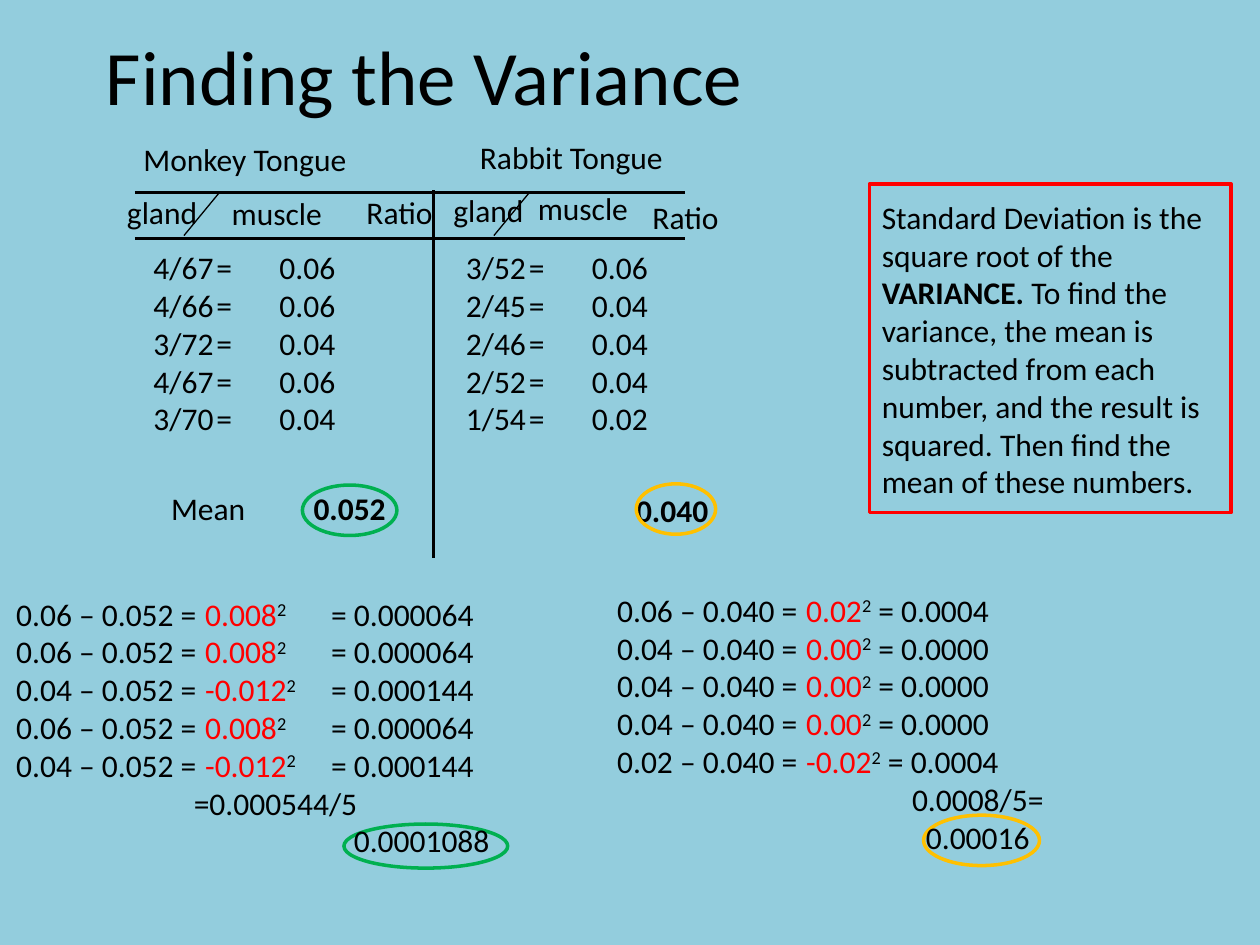
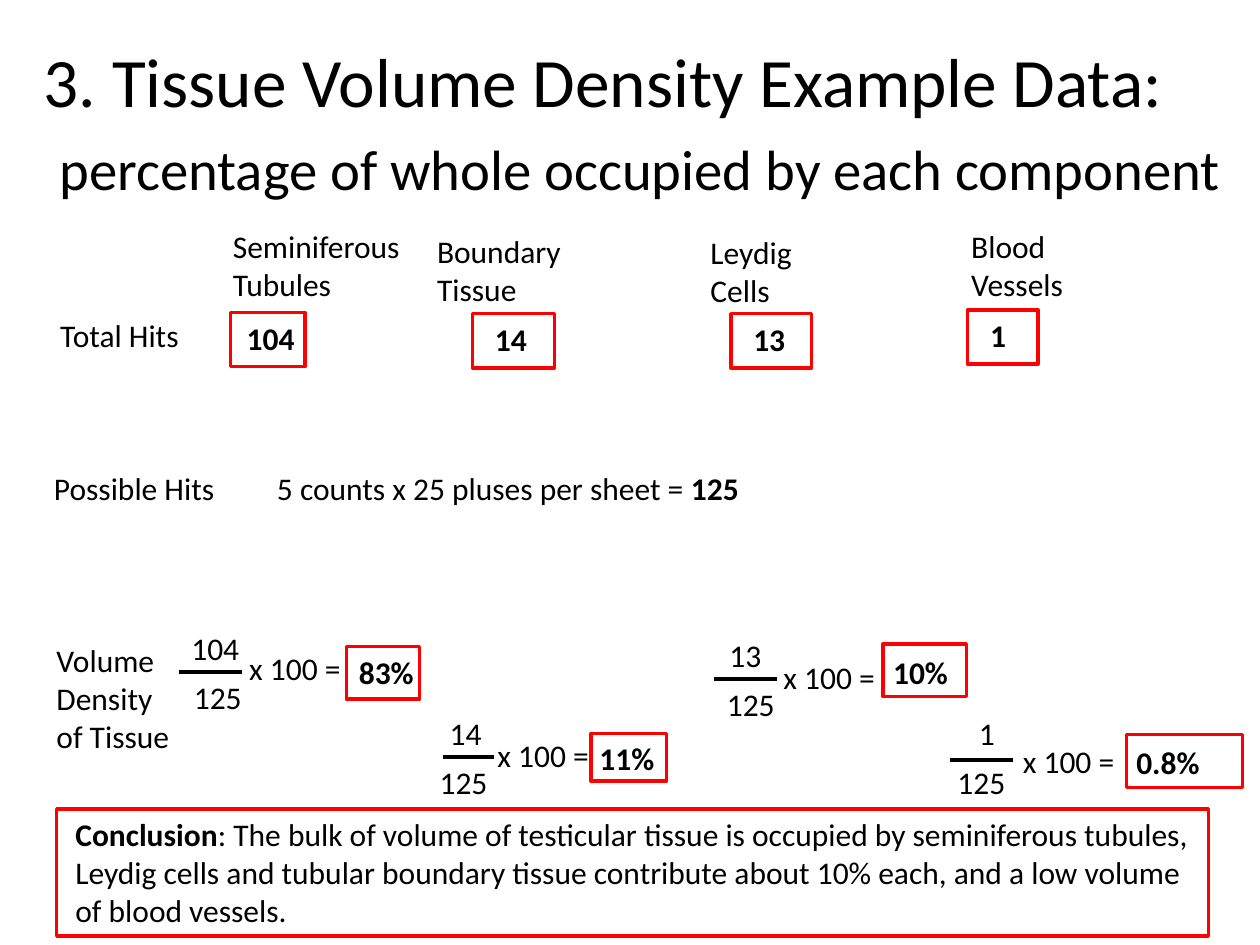
"""Build two slides on variance and tissue volume density."""
from lxml import etree
from pptx import Presentation
from pptx.dml.color import RGBColor
from pptx.enum import shapes, text
from pptx.oxml import ns
from pptx.util import Inches, Pt

COLORS = {"ink": "000000", "red": "FF0000", "green": "00B050",
          "amber": "FFC000", "sky": "93CDDD", "white": "FFFFFF"}
LINE_HEIGHT = 0.4


def add_run(paragraph, content, size=18, bold=False, color="ink", raised=False):
    """Append formatted text, turning newlines into line breaks."""
    for number, line in enumerate(content.split("\n")):
        if number:
            paragraph.add_line_break()
        run = paragraph.add_run()
        run.text = line
        run.font.name = "Calibri"
        run.font.size = Pt(size)
        run.font.bold = bold
        run.font.color.rgb = RGBColor.from_string(COLORS[color])
        if raised:
            run.font._element.set("baseline", "30000")


class Deck:
    """Hold the shared style and the current slide."""

    def __init__(self):
        """Start an empty 10 by 7.5 inch presentation."""
        self.presentation = Presentation()
        self.presentation.slide_width = Inches(10)
        self.presentation.slide_height = Inches(7.5)
        self.slide = None

    def add_slide(self, background):
        """Add a blank slide with a plain background."""
        self.slide = self.presentation.slides.add_slide(self.presentation.slide_layouts[6])
        fill = self.slide.background.fill
        fill.solid()
        fill.fore_color.rgb = RGBColor.from_string(COLORS[background])

    def text_box(self, left, top, width, height=LINE_HEIGHT, middle=False):
        """Add an empty wrapping text box and return its frame."""
        frame = self.slide.shapes.add_textbox(
            Inches(left), Inches(top), Inches(width), Inches(height)).text_frame
        frame.word_wrap = True
        if middle:
            frame.vertical_anchor = text.MSO_ANCHOR.MIDDLE
        return frame

    def label(self, content, left, top, width, height=LINE_HEIGHT, **style):
        """Add a text box with a single run."""
        frame = self.text_box(left, top, width, height)
        add_run(frame.paragraphs[0], content, **style)

    def title(self, runs, left, top, width, height, centered=False):
        """Add a vertically centred title made of (text, size) runs."""
        paragraph = self.text_box(left, top, width, height, middle=True).paragraphs[0]
        if centered:
            paragraph.alignment = text.PP_ALIGN.CENTER
        for content, size in runs:
            add_run(paragraph, content, size=size)

    def rich(self, paragraphs, left, top, width, height=LINE_HEIGHT, tabs=()):
        """Add paragraphs given as (indent, runs), with shared tab stops."""
        frame = self.text_box(left, top, width, height)
        for number, (indent, runs) in enumerate(paragraphs):
            paragraph = frame.add_paragraph() if number else frame.paragraphs[0]
            properties = paragraph._p.get_or_add_pPr()
            properties.set("marL", str(Inches(indent)))
            properties.set("indent", "0")
            if tabs:
                stops = etree.SubElement(properties, ns.qn("a:tabLst"))
                for position, alignment in tabs:
                    etree.SubElement(stops, ns.qn("a:tab"),
                                     pos=str(Inches(position)), algn=alignment)
            for content, style in runs:
                add_run(paragraph, content, **style)

    def outline(self, left, top, width, height, color="red", kind="RECTANGLE"):
        """Add an unfilled outline."""
        shape = self.slide.shapes.add_shape(
            shapes.MSO_SHAPE[kind], Inches(left), Inches(top), Inches(width), Inches(height))
        shape.shadow.inherit = False
        shape.fill.background()
        shape.line.color.rgb = RGBColor.from_string(COLORS[color])
        shape.line.width = Pt(2)

    def line(self, start_x, start_y, end_x, end_y, weight):
        """Add a straight black line."""
        connector = self.slide.shapes.add_connector(
            shapes.MSO_CONNECTOR.STRAIGHT,
            Inches(start_x), Inches(start_y), Inches(end_x), Inches(end_y))
        connector.line.color.rgb = RGBColor.from_string(COLORS["ink"])
        connector.line.width = Pt(weight)
        etree.SubElement(connector._element.spPr, ns.qn("a:effectLst"))


def deviations(mean, rows):
    """Return one paragraph for each squared deviation from the mean."""
    return [(0, [(f"{ratio} – {mean} =\t", {}), (difference, {"color": "red"}),
                 ("2", {"raised": True}), (f"{gap}= {square}", {})])
            for ratio, difference, gap, square in rows]


def build_variance(deck):
    """Build the slide that works out the variance."""
    deck.add_slide("sky")
    deck.title([("Finding the Variance", 44)], -1.13, -0.03, 9, 1.25, centered=True)

    deck.label("Mean", 1.26, 3.83, 1.33)
    deck.label("0.052", 2.39, 3.83, 0.86, bold=True)
    deck.label("0.040", 4.95, 3.85, 0.83, bold=True)
    for left, top, width, height, color in (
            (2.4, 3.85, 0.75, 0.4, "green"), (5.05, 3.84, 0.63, 0.4, "amber"),
            (2.73, 6.54, 1.3, 0.35, "green"), (7.33, 6.47, 0.92, 0.4, "amber")):
        deck.outline(left, top, width, height, color, "OVAL")

    deck.rich([(0, [
        ("Standard Deviation is the square root of the ", {}),
        ("VARIANCE. ", {"bold": True}),
        ("To find the variance, the mean is subtracted from each number, "
         "and the result is squared. Then find the mean of these numbers.", {})])],
        6.9, 1.52, 3.03, 2.52)
    deck.outline(6.9, 1.46, 2.87, 2.61)

    monkey = deviations("0.052", [
        ("0.06", "0.008", "\t", "0.000064"), ("0.06", "0.008", "\t", "0.000064"),
        ("0.04", "-0.012", "\t", "0.000144"), ("0.06", "0.008", "\t", "0.000064"),
        ("0.04", "-0.012", "\t", "0.000144")])
    monkey += [(1.41, [("=0.000544/5", {})]), (2.68, [("0.0001088", {})])]
    deck.rich(monkey, 0.03, 4.67, 4.01, 2.22, tabs=((2.25, "r"), (3.47, "r")))

    rabbit = deviations("0.040", [
        ("0.06", "0.02", " ", "0.0004"), ("0.04", "0.00", " ", "0.0000"),
        ("0.04", "0.00", " ", "0.0000"), ("0.04", "0.00", " ", "0.0000"),
        ("0.02", "-0.02", " ", "0.0004")])
    rabbit += [(2.34, [("0.0008/5=", {})]), (2.45, [("0.00016", {})])]
    deck.rich(rabbit, 4.8, 4.64, 3.73, 2.22, tabs=((2.07, "r"),))

    for left in (1.46, 3.92):
        deck.line(left + 0.28, 1.53, left, 1.87, 0.75)
    for top in (1.53, 1.89):
        deck.line(1.07, top, 5.44, top, 1.75)
    deck.line(3.44, 1.51, 3.44, 4.43, 1.75)

    for heading, left, top, width in (
            ("Monkey Tongue", 1.04, 1.06, 2), ("Rabbit Tongue", 3.71, 1.05, 2.79),
            ("gland", 0.91, 1.48, 0.87), ("gland", 3.5, 1.47, 1.04),
            ("muscle", 1.74, 1.49, 0.98), ("muscle", 4.17, 1.45, 0.93),
            ("Ratio", 2.81, 1.48, 0.89), ("Ratio", 5.08, 1.52, 0.89)):
        deck.label(heading, left, top, width)

    for left, value_tab, counts, ratios in (
            (1.12, 1.18, "4/67 4/66 3/72 4/67 3/70", "0.06 0.06 0.04 0.06 0.04"),
            (3.6, 1.24, "3/52 2/45 2/46 2/52 1/54", "0.06 0.04 0.04 0.04 0.02")):
        rows = [(0, [(f"{count}\t=\t{ratio}", {})])
                for count, ratio in zip(counts.split(), ratios.split())]
        deck.rich(rows, left, 1.92, 2.4, 1.62, tabs=((1, "l"), (value_tab, "l")))


def build_density(deck):
    """Build the slide that works out tissue volume density."""
    deck.add_slide("white")
    deck.title([("3. Tissue Volume Density Example Data:\n ", 39.6),
                ("percentage of whole occupied by each component", 32.4)],
               0.25, 0.25, 10.17, 1.42)

    deck.label("Total Hits", 0.38, 2.46, 1.33)
    deck.label("Possible Hits", 0.33, 3.67, 1.5)
    deck.rich([(0, [("5 counts x 25 pluses per sheet = ", {}), ("125", {"bold": True})])],
              2.1, 3.67, 5.73)
    deck.label("Volume\nDensity\nof Tissue", 0.35, 5.04, 1.5, 1.01)

    for component, left, top, width in (
            ("Seminiferous\nTubules", 1.75, 1.75, 1.71), ("Boundary\nTissue", 3.37, 1.79, 1.71),
            ("Leydig\nCells", 5.54, 1.8, 1.05), ("Blood\nVessels", 7.61, 1.75, 1.05)):
        deck.label(component, left, top, width, 0.71)

    for hits, text_left, left, top, width in (
            ("104", 1.86, 1.83, 2.48, 0.59), ("14", 3.83, 3.75, 2.49, 0.65),
            ("13", 5.88, 5.8, 2.49, 0.64), ("1", 7.76, 7.68, 2.46, 0.56)):
        deck.label(hits, text_left, top, 0.71, bold=True)
        deck.outline(left, top, width, 0.43)

    for hits, top, hits_left, total_left, bar_left, bar_top, bar_width, times_left, times_top in (
            ("104", 4.94, 1.42, 1.44, 1.42, 5.33, 0.5, 1.88, 5.1),
            ("14", 5.62, 3.47, 3.39, 3.52, 6.01, 0.4, 3.85, 5.79),
            ("13", 5, 5.69, 5.67, 5.67, 5.39, 0.5, 6.12, 5.17),
            ("1", 5.62, 7.67, 7.5, 7.54, 6.03, 0.5, 8.02, 5.84)):
        deck.label(hits, hits_left, top, 0.71)
        deck.label("125", total_left, top + 0.39, 0.71)
        deck.line(bar_left, bar_top, bar_left + bar_width, bar_top, 2.25)
        deck.label("x 100 =", times_left, times_top, 1)

    for percentage, text_left, text_top, left, top, width, height in (
            ("83%", 2.75, 5.13, 2.75, 5.13, 0.58, 0.42),
            ("11%", 4.66, 5.82, 4.69, 5.82, 0.6, 0.38),
            ("10%", 6.99, 5.13, 7.01, 5.11, 0.66, 0.42),
            ("0.8%", 8.92, 5.85, 8.94, 5.83, 0.92, 0.42)):
        deck.label(percentage, text_left, text_top, 1, bold=True)
        deck.outline(left, top, width, height)

    deck.rich([(0, [
        ("Conclusion", {"bold": True}),
        (": The bulk of volume of testicular tissue is occupied by seminiferous tubules, "
         "Leydig cells and tubular boundary tissue contribute about 10% each, "
         "and a low volume of blood vessels.", {})])], 0.5, 6.42, 9.09, 1.01)
    deck.outline(0.45, 6.42, 9.14, 1.01)


def main():
    """Build both slides and save them."""
    deck = Deck()
    build_variance(deck)
    build_density(deck)
    deck.presentation.save("out.pptx")


if __name__ == "__main__":
    main()
